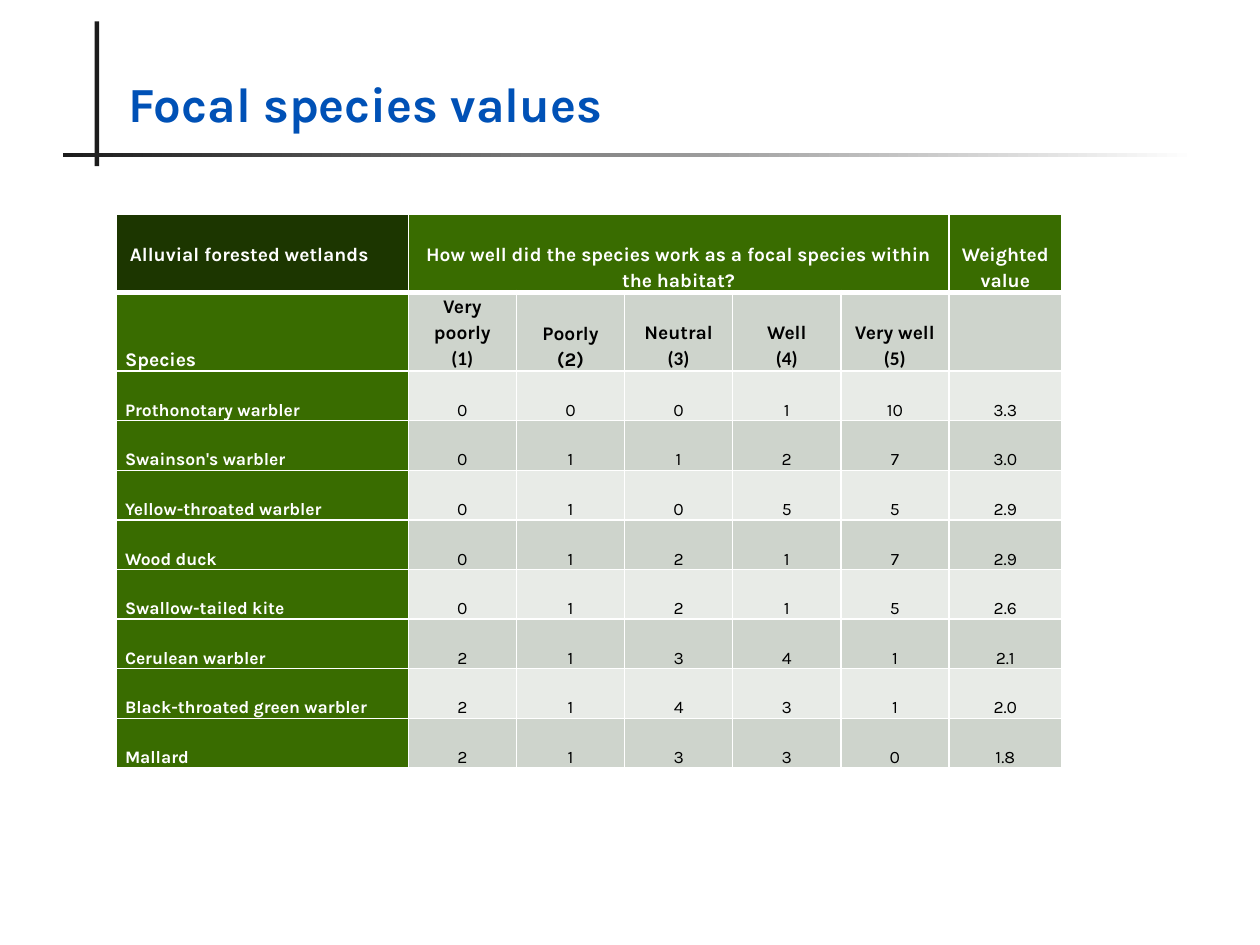
from lxml.etree import SubElement
from pptx import Presentation
from pptx.dml.color import RGBColor
from pptx.enum.shapes import MSO_SHAPE
from pptx.enum.text import MSO_ANCHOR, MSO_AUTO_SIZE, PP_ALIGN
from pptx.oxml.ns import qn
from pptx.util import Cm, Pt

TITLE = "Focal species values"
HEADINGS = ["Alluvial forested wetlands",
            "How well did the species work as a focal species within the habitat?",
            "", "", "", "", "Weighted value"]
RATINGS = ["Species", "Very poorly\n(1)", "Poorly\n(2)", "Neutral\n(3)",
           "Well\n(4)", "Very well\n(5)", ""]
SPECIES = [
    ("Prothonotary warbler", 0, 0, 0, 1, 10, "3.3"),
    ("Swainson's warbler", 0, 1, 1, 2, 7, "3.0"),
    ("Yellow-throated warbler", 0, 1, 0, 5, 5, "2.9"),
    ("Wood duck", 0, 1, 2, 1, 7, "2.9"),
    ("Swallow-tailed kite", 0, 1, 2, 1, 5, "2.6"),
    ("Cerulean warbler", 2, 1, 3, 4, 1, "2.1"),
    ("Black-throated green warbler", 2, 1, 4, 3, 1, "2.0"),
    ("Mallard", 2, 1, 3, 3, 0, "1.8"),
]
ROWS = [HEADINGS, RATINGS, *SPECIES]
COLUMN_WIDTHS = [5.89] + [2.18] * 5 + [2.27]
ROW_HEIGHTS = [1.57, 1.57] + [1.0] * len(SPECIES)
WHITE, BLACK, INK, BLUE = "FFFFFF", "000000", "1C1C1C", "0051B6"
DARK_GREEN, GREEN, BANDS = "1C3600", "396C00", ("E8EBE7", "CED4CC")
CALIBRI_LABELS = ("(1)", "(3)", "(4)", "(5)")


def color(hex_value):
    return RGBColor.from_string(hex_value)


def style_font(font, size, hex_value, bold=True, name="Karla"):
    font.name, font.size, font.bold = name, Pt(size), bold
    font.color.rgb = color(hex_value)


def add_rule(slide, left, top, width, height):
    rule = slide.shapes.add_shape(MSO_SHAPE.RECTANGLE, Cm(left), Cm(top), Cm(width), Cm(height))
    rule.shadow.inherit = False
    rule.line.fill.background()
    return rule.fill


def add_borders(cell, row):
    weights = {"lnL": 1, "lnR": 1, "lnT": 3 if row == 1 else 1, "lnB": 3 if row == 0 else 1}
    for side, weight in weights.items():
        border = SubElement(cell._tc.get_or_add_tcPr(), qn("a:" + side), w=str(Pt(weight)))
        SubElement(SubElement(border, qn("a:solidFill")), qn("a:srgbClr"), val=WHITE)


def cell_fill(row, column):
    if row == 0 and column == 0:
        return DARK_GREEN
    return GREEN if row == 0 or column == 0 else BANDS[row % 2]


def fill_cell(cell, row, column, content):
    cell.text = str(content)
    cell.vertical_anchor = MSO_ANCHOR.BOTTOM
    cell.margin_left = cell.margin_right = Cm(0.18)
    cell.margin_top = cell.margin_bottom = 0
    add_borders(cell, row)
    cell.fill.solid()
    cell.fill.fore_color.rgb = color(cell_fill(row, column))
    for paragraph in cell.text_frame.paragraphs:
        paragraph.alignment = PP_ALIGN.CENTER if column else PP_ALIGN.LEFT
        paragraph.line_spacing = 1.15
        style_font(paragraph.font, 11 if row < 2 else 10,
                   WHITE if row == 0 or column == 0 else BLACK,
                   row < 2 or column == 0,
                   "Calibri" if paragraph.text in CALIBRI_LABELS else "Karla")


def add_species_table(slide):
    table = slide.shapes.add_table(len(ROWS), len(COLUMN_WIDTHS), Cm(2.34), Cm(4.32),
                                   Cm(sum(COLUMN_WIDTHS)), Cm(sum(ROW_HEIGHTS))).table
    for column, width in zip(table.columns, COLUMN_WIDTHS):
        column.width = Cm(width)
    for table_row, height in zip(table.rows, ROW_HEIGHTS):
        table_row.height = Cm(height)
    for row, contents in enumerate(ROWS):
        for column, content in enumerate(contents):
            fill_cell(table.cell(row, column), row, column, content)
    table.cell(0, 1).merge(table.cell(0, 5))
    habitat = table.cell(0, 0)
    habitat.margin_left, habitat.margin_bottom = Cm(0.28), Cm(0.53)


def main():
    deck = Presentation()
    deck.slide_width, deck.slide_height = Cm(25.4), Cm(19.05)
    slide = deck.slides.add_slide(deck.slide_layouts[5])

    upright = add_rule(slide, 1.91, 0.43, 0.09, 2.92)
    upright.solid()
    upright.fore_color.rgb = color(INK)
    underline = add_rule(slide, 1.27, 3.09, 22.86, 0.08)
    underline.gradient()
    underline.gradient_angle = 0
    for stop, shade in zip(underline.gradient_stops, (INK, WHITE)):
        stop.color.rgb = color(shade)

    title = slide.shapes.title
    title.left, title.top, title.width, title.height = Cm(2.34), Cm(0.64), Cm(21.79), Cm(2.16)
    title.text = TITLE
    title.text_frame.auto_size = MSO_AUTO_SIZE.NONE
    title.text_frame.vertical_anchor = MSO_ANCHOR.BOTTOM
    heading = title.text_frame.paragraphs[0]
    heading.alignment = PP_ALIGN.LEFT
    style_font(heading.font, 28, BLUE)

    add_species_table(slide)
    deck.save("out.pptx")


if __name__ == "__main__":
    main()
